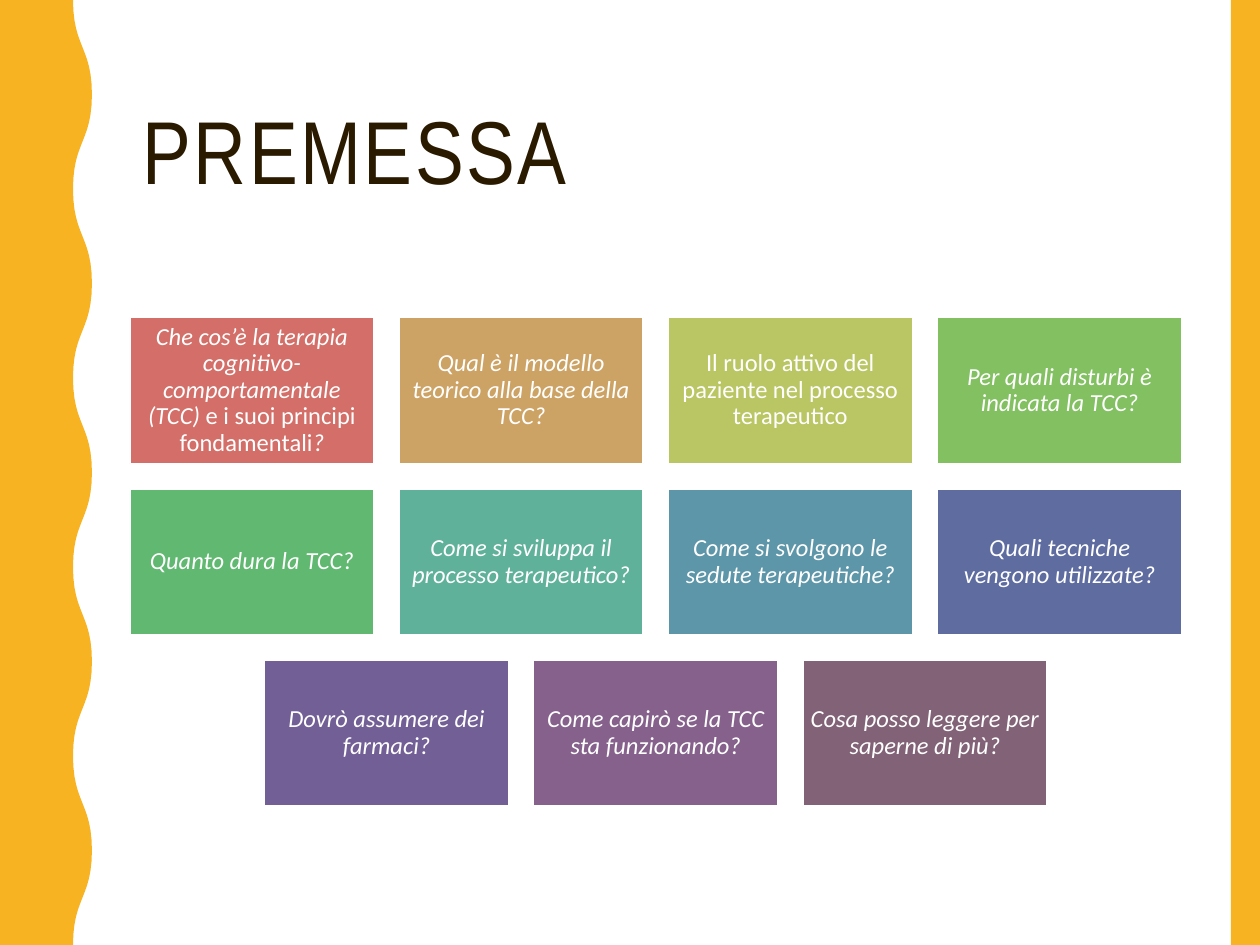
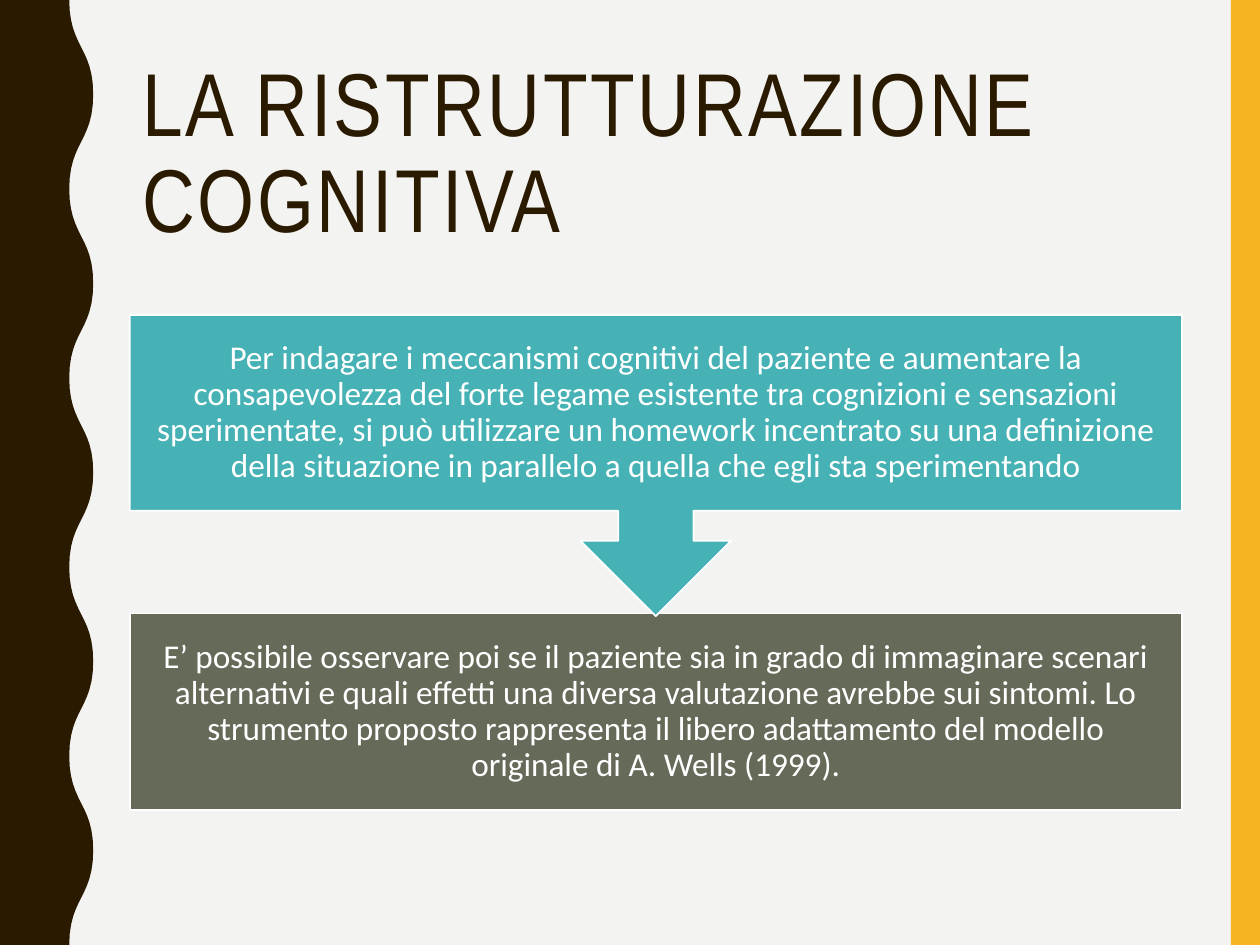
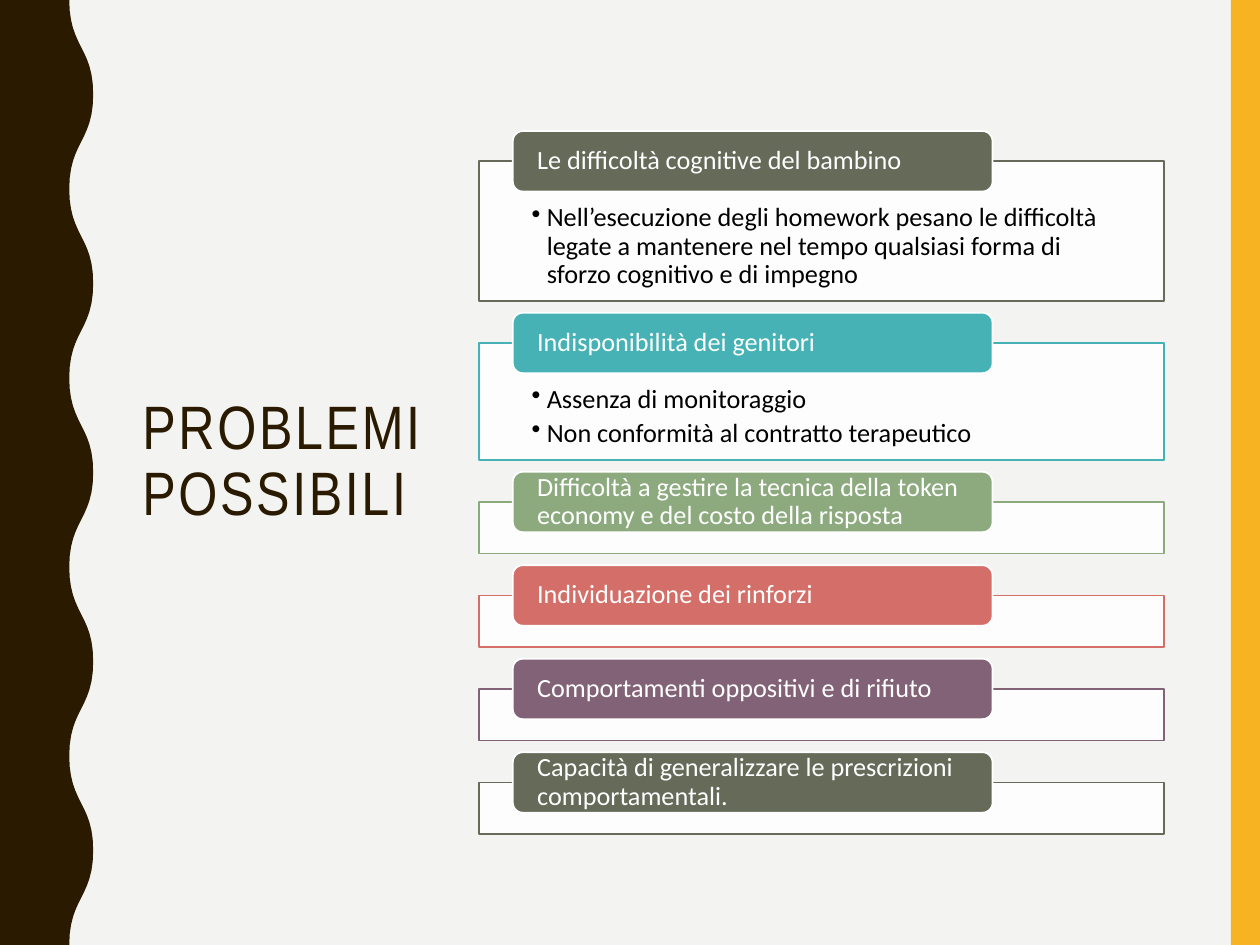
from lxml.etree import SubElement
from pptx import Presentation
from pptx.dml.color import RGBColor
from pptx.enum.shapes import MSO_SHAPE as SHAPE
from pptx.enum.text import MSO_ANCHOR as ANCHOR, MSO_AUTO_SIZE as AUTO, PP_ALIGN as ALIGN
from pptx.oxml.ns import qn
from pptx.util import Inches, Pt

COLORS = {
    "white": "FFFFFF", "black": "000000", "paper": "F3F3F2", "brown": "2A1A00",
    "amber": "F8B323", "olive": "656A59", "teal": "46B2B5", "sage": "8CAA7E",
    "coral": "D36F68", "plum": "826276", "sand": "CDA365", "lime": "BAC663",
    "leaf": "82C061", "green": "60B871", "mint": "5FB19A", "steel": "5E96A9",
    "indigo": "5E6CA0", "violet": "715F96", "purple": "85618C",
}
WIDTH, HEIGHT = 10, 7.5
TITLE_BOX = (1.03, 0.42, 8.35, 1.63)
SIDE_TITLE_BOX = (1.03, 0.71, 2.78, 5.93)
BODY = {"name": "Calibri", "color": "white"}
CENTERED = {"alignment": ALIGN.CENTER, "line_spacing": 0.9}
LEFT = {"alignment": ALIGN.LEFT, "line_spacing": 0.9}

QUESTIONS = [
    [("coral", [("Che cos’è la terapia cognitivo-comportamentale (TCC) ", True),
                ("e i suoi principi fondamentali", False), ("?", True)]),
     ("sand", [("Qual è il modello teorico alla base della TCC?", True)]),
     ("lime", [("Il ruolo attivo del paziente nel processo terapeutico", False)]),
     ("leaf", [("Per quali disturbi è indicata la TCC?", True)])],
    [("green", [("Quanto dura la TCC?", True)]),
     ("mint", [("Come si sviluppa il processo terapeutico?", True)]),
     ("steel", [("Come si svolgono le sedute terapeutiche?", True)]),
     ("indigo", [("Quali tecniche vengono utilizzate?", True)])],
    [("violet", [("Dovrò assumere dei farmaci?", True)]),
     ("purple", [("Come capirò se la TCC sta funzionando?", True)]),
     ("plum", [("Cosa posso leggere per saperne di più?", True)])],
]
HOMEWORK = (
    "Per indagare i meccanismi cognitivi del paziente e aumentare la consapevolezza del "
    "forte legame esistente tra cognizioni e sensazioni sperimentate, si può utilizzare un "
    "homework incentrato su una definizione della situazione in parallelo a quella che egli "
    "sta sperimentando")
SCENARIOS = (
    "E’ possibile osservare poi se il paziente sia in grado di immaginare scenari alternativi "
    "e quali effetti una diversa valutazione avrebbe sui sintomi. Lo strumento proposto "
    "rappresenta il libero adattamento del modello originale di A. Wells (1999).")
PROBLEMS = [
    ("olive", 1.11, "Le difficoltà cognitive del bambino",
     ["Nell’esecuzione degli homework pesano le difficoltà legate a mantenere nel tempo "
      "qualsiasi forma di sforzo cognitivo e di impegno"]),
    ("teal", 0.93, "Indisponibilità dei genitori",
     ["Assenza di monitoraggio", "Non conformità al contratto terapeutico"]),
    ("sage", 0.41,
     "Difficoltà a gestire la tecnica della token economy e del costo della risposta", []),
    ("coral", 0.41, "Individuazione dei rinforzi", []),
    ("plum", 0.41, "Comportamenti oppositivi e di rifiuto", []),
    ("olive", 0.41, "Capacità di generalizzare le prescrizioni comportamentali.", []),
]


def rgb(name):
    """Return the named colour."""
    return RGBColor.from_string(COLORS[name])


def apply(target, values):
    """Set each attribute of the target from a dict."""
    for key, value in values.items():
        if key == "color":
            target.color.rgb = rgb(value)
        else:
            setattr(target, key, value)


def set_frame(tf, insets, anchor=ANCHOR.MIDDLE):
    """Set wrapping, anchor and insets (left, top, right, bottom)."""
    sides = ("margin_left", "margin_top", "margin_right", "margin_bottom")
    apply(tf, {"word_wrap": True, "auto_size": AUTO.NONE, "vertical_anchor": anchor,
               **dict(zip(sides, map(Inches, insets)))})


def write(tf, paragraphs, para, font, bullet=None):
    """Fill a text frame with paragraphs, each a list of (text, italic) runs."""
    for i, runs in enumerate(paragraphs):
        p = tf.paragraphs[0] if i == 0 else tf.add_paragraph()
        apply(p, para)
        if bullet:
            pPr = p._p.get_or_add_pPr()
            pPr.set("marL", str(Inches(0.12)))
            pPr.set("indent", str(-Inches(0.12)))
            SubElement(pPr, qn("a:buChar")).set("char", bullet)
        for text, italic in runs:
            r = p.add_run()
            r.text = text
            apply(r.font, {**font, "italic": italic})


def paint(sp, fill, line=None):
    """Give a shape a flat fill and an optional thin outline."""
    sp.shadow.inherit = False
    sp.fill.solid()
    sp.fill.fore_color.rgb = rgb(fill)
    if line:
        apply(sp.line, {"color": line, "width": Pt(1)})
    else:
        sp.line.fill.background()


def add_box(s, kind, box, fill, line=None):
    """Add a painted preset shape."""
    sp = s.shapes.add_shape(kind, *map(Inches, box))
    paint(sp, fill, line)
    return sp


def add_wave(s, low, high, color):
    """Draw the left band, whose right edge swings between low and high."""
    half, steps = 0.75, 12
    points = []
    for k in range(round(HEIGHT / half)):
        start, end = (low, high) if k % 2 == 0 else (high, low)
        for t in (j / steps for j in range(steps)):
            x = start + (end - start) * (3 * t ** 2 - 2 * t ** 3)
            y = half * (k + 1.5 * t * (1 - t) + t ** 3)
            points.append((Inches(x), Inches(y)))
    points += [(Inches(low), Inches(HEIGHT)), (0, Inches(HEIGHT))]
    fb = s.shapes.build_freeform(0, 0)
    fb.add_line_segments(points, close=True)
    paint(fb.convert_to_shape(), color)


def add_base(prs, title, box, size, background="paper", wave=(0.55, 0.74, "brown")):
    """Start a slide with its background, side bands and title."""
    s = prs.slides.add_slide(prs.slide_layouts[5])
    s.background.fill.solid()
    s.background.fill.fore_color.rgb = rgb(background)
    add_wave(s, *wave)
    add_box(s, SHAPE.RECTANGLE, (WIDTH - 0.23, 0, 0.23, HEIGHT), "amber")
    sp = s.shapes.title
    apply(sp, dict(zip(("left", "top", "width", "height"), map(Inches, box))))
    set_frame(sp.text_frame, (0.1, 0.05, 0.1, 0.05))
    write(sp.text_frame, [[(title, False)]], LEFT,
          {"name": "Arial Narrow", "size": Pt(size), "color": "brown"})
    sp.text_frame.paragraphs[0].runs[0].font._element.set("spc", "150")
    return s


def add_question_grid(s, box, rows):
    """Place rows of question tiles, each row centred in the box."""
    left, top, width, height = box
    w, h = 1.94, 1.16
    gap_x = (width - 4 * w) / 3
    gap_y = (height - len(rows) * h) / (len(rows) - 1)
    for i, row in enumerate(rows):
        indent = (width - len(row) * w - (len(row) - 1) * gap_x) / 2
        for j, (color, runs) in enumerate(row):
            x, y = left + indent + j * (w + gap_x), top + i * (h + gap_y)
            sp = add_box(s, SHAPE.RECTANGLE, (x, y, w, h), color, "white")
            set_frame(sp.text_frame, [0.06] * 4)
            write(sp.text_frame, [runs], CENTERED, {**BODY, "size": Pt(14)})


def add_process(s, box, first, second):
    """Stack an arrow callout above the block it leads to."""
    left, top, width, height = box
    block_h, callout_h = 1.56, 2.39
    steps = [
        (SHAPE.RECTANGLE, top + height - block_h, block_h, "olive", second),
        (SHAPE.DOWN_ARROW_CALLOUT, top, callout_h, "teal", first),
    ]
    for kind, y, h, color, text in steps:
        sp = add_box(s, kind, (left, y, width, h), color, "white")
        set_frame(sp.text_frame, [0.15] * 4)
        write(sp.text_frame, [[(text, False)]], CENTERED, {**BODY, "size": Pt(19)})


def add_problem(s, box, color, label, details):
    """Draw a framed list with a rounded label over its top edge."""
    left, top, width, height = box
    sp = add_box(s, SHAPE.RECTANGLE, box, "white", color)
    fill = sp.fill._xPr.find(qn("a:solidFill"))
    SubElement(fill[0], qn("a:alpha")).set("val", "90000")
    if details:
        set_frame(sp.text_frame, (0.42, 0.34, 0.42, 0.12), ANCHOR.TOP)
        write(sp.text_frame, [[(text, False)] for text in details],
              {**LEFT, "space_after": Pt(3)},
              {**BODY, "size": Pt(15), "color": "black"}, "•")
    tag = add_box(s, SHAPE.ROUNDED_RECTANGLE,
                  (left + 0.27, top - 0.24, 0.7 * width, 0.48), color, "white")
    set_frame(tag.text_frame, (0.17, 0, 0.17, 0))
    write(tag.text_frame, [[(label, False)]], LEFT, {**BODY, "size": Pt(15)})


def add_problem_list(s, box, problems):
    """Stack the problems down the box with equal gaps."""
    left, top, width, height = box
    gap = (height - sum(h for _, h, _, _ in problems)) / (len(problems) - 1)
    for color, h, label, details in problems:
        add_problem(s, (left, top, width, h), color, label, details)
        top += h + gap


def main():
    """Build the three slides and save them."""
    prs = Presentation()
    prs.slide_width, prs.slide_height = Inches(WIDTH), Inches(HEIGHT)
    s = add_base(prs, "PREMESSA", TITLE_BOX, 51, "white", (0.58, 0.73, "amber"))
    add_question_grid(s, (1.03, 2.52, 8.35, 3.88), QUESTIONS)
    s = add_base(prs, "LA RISTRUTTURAZIONE COGNITIVA", TITLE_BOX, 51)
    add_process(s, (1.03, 2.5, 8.35, 3.93), HOMEWORK, SCENARIOS)
    s = add_base(prs, "PROBLEMI POSSIBILI", SIDE_TITLE_BOX, 35)
    add_problem_list(s, (3.8, 1.28, 5.44, 5.34), PROBLEMS)
    prs.save("out.pptx")


if __name__ == "__main__":
    main()
